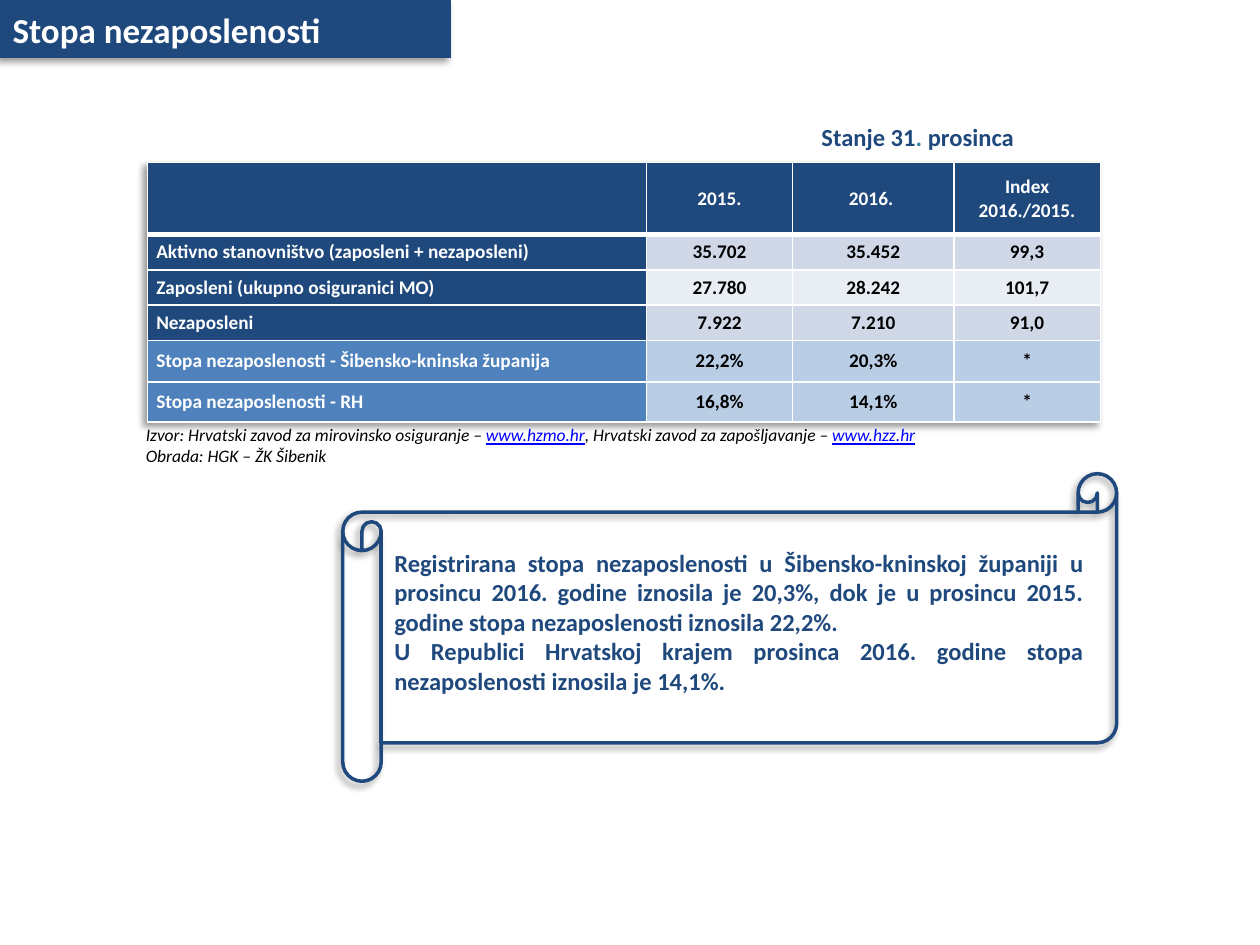
from dataclasses import dataclass

from lxml import etree
from pptx import Presentation
from pptx import util as u
from pptx.dml.color import RGBColor
from pptx.enum import shapes, text
from pptx.oxml import ns


@dataclass(frozen=True)
class Theme:
    font: str = "Calibri"
    navy: str = "1F497D"
    blue: str = "4F81BD"
    pale: str = "B9CDE5"
    band: str = "D0D8E8"
    light: str = "E9EDF4"
    teal: str = "31859C"
    link: str = "0000FF"
    white: str = "FFFFFF"
    black: str = "000000"
    head: int = 20
    body: int = 14
    cell: int = 11
    note: int = 10


T = Theme()
A = text.PP_ALIGN

# First column colour, value colour, then the row's text
ROWS = [
    (T.navy, T.navy, ["", "2015.", "2016. ", "Index 2016./2015."]),
    (T.navy, T.band, ["Aktivno stanovništvo (zaposleni + nezaposleni)",
                      "35.702", "35.452", "99,3"]),
    (T.navy, T.light, ["Zaposleni (ukupno osiguranici MO)",
                       "27.780", "28.242", "101,7"]),
    (T.navy, T.band, ["Nezaposleni", "7.922", "7.210", "91,0"]),
    (T.blue, T.pale, ["Stopa nezaposlenosti - Šibensko-kninska županija",
                      "22,2%", "20,3%", "*"]),
    (T.blue, T.pale, ["Stopa nezaposlenosti - RH", "16,8%", "14,1%", "*"]),
]
WIDTHS = [10.06, 2.95, 3.25, 2.95]
HEIGHTS = [1.45, 0.71, 0.71, 0.71, 0.84, 0.81]


def rgb(color):
    return RGBColor.from_string(color)


def cms(*box):
    return [u.Cm(v) for v in box]


def node(parent, tag, **attrs):
    """Add one drawing element."""
    return etree.SubElement(parent, ns.qn(tag), attrs)


def write(par, words, size=T.body, color=T.navy, bold=False,
          italic=False, under=False):
    """Add one run with its format."""
    run = par.add_run()
    run.text = words
    font = run.font
    font.name, font.size = T.font, u.Pt(size)
    font.bold, font.italic, font.underline = bold, italic, under
    font.color.rgb = rgb(color)


def cast(effects):
    """Fill an effect list with the slide's soft shadow."""
    shade = node(effects, "a:outerShdw", blurRad=str(u.Pt(4)),
                 dist=str(u.Pt(3)), dir="8100000", algn="tr",
                 rotWithShape="0")
    color = node(shade, "a:srgbClr", val=T.black)
    node(color, "a:alpha", val="40000")


def shadow(shape):
    shape.shadow.inherit = False
    cast(shape.element.spPr.find(ns.qn("a:effectLst")))


def textbox(slide, box):
    frame = slide.shapes.add_textbox(*cms(*box)).text_frame
    frame.word_wrap = True
    return frame


def border(cell, top=1, bottom=1):
    """Draw white rules around a cell."""
    props = cell._tc.get_or_add_tcPr()
    for side, width in zip("LRTB", (1, 1, top, bottom)):
        line = node(props, f"a:ln{side}", w=str(u.Pt(width)))
        node(node(line, "a:solidFill"), "a:srgbClr", val=T.white)


def banner(slide, x, y, w, h):
    title = slide.shapes.title
    title.left, title.top, title.width, title.height = cms(x, y, w, h)
    title.fill.solid()
    title.fill.fore_color.rgb = rgb(T.navy)
    shadow(title)
    frame = title.text_frame
    frame.auto_size = text.MSO_AUTO_SIZE.NONE
    frame.vertical_anchor = text.MSO_ANCHOR.MIDDLE
    par = frame.paragraphs[0]
    par.alignment = A.LEFT
    write(par, "Stopa nezaposlenosti", size=T.head, color=T.white, bold=True)


def grid(slide, x, y, w, h):
    # Date above the right-hand columns
    par = textbox(slide, (x + 13.34, y - 0.94, 6.6, 0.86)).paragraphs[0]
    for words, color in (("Stanje 31", T.navy), (". ", T.teal),
                         ("prosinca", T.navy)):
        write(par, words, color=color, bold=True)

    # Table
    table = slide.shapes.add_table(len(ROWS), len(WIDTHS),
                                   *cms(x, y, w, h)).table
    effects = etree.Element(ns.qn("a:effectLst"))
    cast(effects)
    table._tbl.tblPr.insert(0, effects)
    for col, width in zip(table.columns, WIDTHS):
        col.width = u.Cm(width)
    for r, (first, rest, words) in enumerate(ROWS):
        table.rows[r].height = u.Cm(HEIGHTS[r])
        for c, word in enumerate(words):
            cell = table.cell(r, c)
            border(cell, top=3 if r == 1 else 1, bottom=3 if r == 0 else 1)
            cell.fill.solid()
            cell.fill.fore_color.rgb = rgb(rest if c else first)
            cell.vertical_anchor = text.MSO_ANCHOR.MIDDLE
            cell.margin_left = cell.margin_right = u.Cm(0.18)
            cell.margin_top = cell.margin_bottom = 0
            par = cell.text_frame.paragraphs[0]
            par.alignment = A.CENTER if c else A.LEFT
            if word:
                write(par, word, size=T.cell, bold=True,
                      color=T.black if r and c else T.white)


def source(slide, *box):
    frame = textbox(slide, box)
    par = frame.paragraphs[0]
    for label, site in (
            ("Izvor: Hrvatski zavod za mirovinsko osiguranje – ",
             "www.hzmo.hr"),
            (", Hrvatski zavod za zapošljavanje – ", "www.hzz.hr")):
        write(par, label, size=T.note, color=T.black, italic=True)
        write(par, site, size=T.note, color=T.link, italic=True, under=True)
    write(frame.add_paragraph(), "Obrada: HGK – ŽK Šibenik",
          size=T.note, color=T.black, italic=True)


def scroll(slide, x, y, w, h):
    shape = slide.shapes.add_shape(shapes.MSO_SHAPE.HORIZONTAL_SCROLL,
                                   *cms(x, y, w, h))
    shape.fill.background()
    shape.line.color.rgb = rgb(T.navy)
    shape.line.width = u.Pt(2)
    shadow(shape)

    # Summary inside the scroll
    frame = textbox(slide, (x + 0.79, y + 1.37, w - 1.2, 3.76))
    first, second = frame.paragraphs[0], frame.add_paragraph()
    first.alignment = second.alignment = A.JUSTIFY
    write(first, "Registrirana stopa nezaposlenosti u Šibensko-kninskoj "
          "županiji u prosincu 2016. godine iznosila je 20,3%, dok je u "
          "prosincu 2015. godine stopa nezaposlenosti iznosila 22,2%. ",
          bold=True)
    write(second, "U Republici Hrvatskoj krajem prosinca 2016. godine stopa "
          "nezaposlenosti iznosila je 14,1%.", bold=True)


def main():
    deck = Presentation()
    deck.slide_width, deck.slide_height = cms(25.4, 19.05)
    slide = deck.slides.add_slide(deck.slide_layouts[5])
    banner(slide, 0, 0, 9.09, 1.17)
    grid(slide, 2.97, 3.28, sum(WIDTHS), sum(HEIGHTS))
    source(slide, 2.69, 8.43, 16.2, 1.12)
    scroll(slide, 6.91, 9.55, 15.6, 6.2)
    deck.save("out.pptx")


if __name__ == "__main__":
    main()
